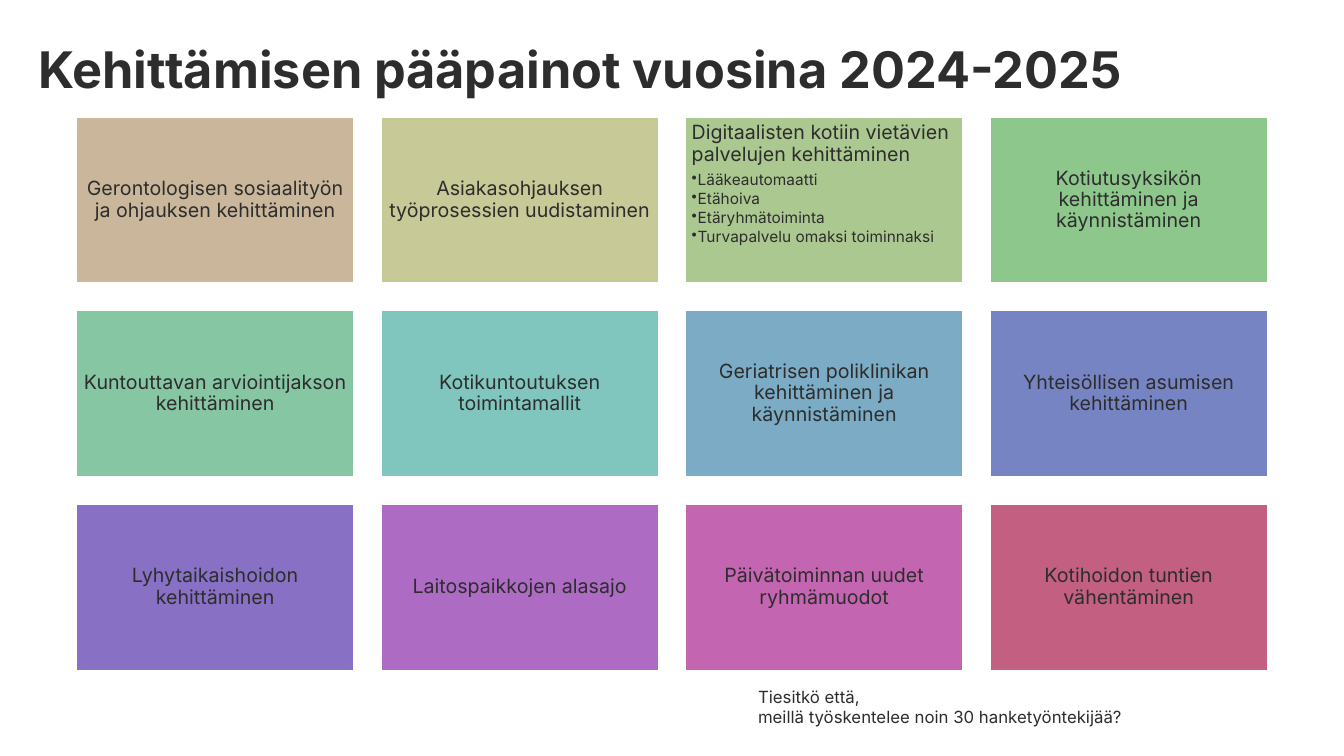
from lxml import etree
from pptx import Presentation
from pptx.dml.color import RGBColor
from pptx.enum.shapes import MSO_SHAPE
from pptx.enum.text import MSO_ANCHOR, MSO_AUTO_SIZE, PP_ALIGN
from pptx.oxml.ns import qn
from pptx.util import Inches, Pt

RECT = MSO_SHAPE.RECTANGLE
TOP, MIDDLE, BOTTOM = MSO_ANCHOR.TOP, MSO_ANCHOR.MIDDLE, MSO_ANCHOR.BOTTOM
LEFT, CENTER = PP_ALIGN.LEFT, PP_ALIGN.CENTER
FIT_SHAPE = MSO_AUTO_SIZE.SHAPE_TO_FIT_TEXT

FONT, INK, WHITE = "Inter", "2D2D2D", "FFFFFF"
TITLE = "Kehittämisen pääpainot vuosina 2024-2025"
FOOTNOTE = ["Tiesitkö että,", "meillä työskentelee noin 30 hanketyöntekijää?"]

# Heading, fill, bullets
CARDS = [
    ("Gerontologisen sosiaalityön ja ohjauksen kehittäminen", "CAB69B", []),
    ("Asiakasohjauksen työprosessien uudistaminen", "C7C996", []),
    ("Digitaalisten kotiin vietävien palvelujen kehittäminen", "ACC891",
     ["Lääkeautomaatti", "Etähoiva", "Etäryhmätoiminta",
      "Turvapalvelu omaksi toiminnaksi"]),
    ("Kotiutusyksikön kehittäminen ja käynnistäminen", "8EC78C", []),
    ("Kuntouttavan arviointijakson kehittäminen", "86C6A2", []),
    ("Kotikuntoutuksen toimintamallit", "81C6BE", []),
    ("Geriatrisen poliklinikan kehittäminen ja käynnistäminen", "7BABC5", []),
    ("Yhteisöllisen asumisen kehittäminen", "7684C4", []),
    ("Lyhytaikaishoidon kehittäminen", "8870C4", []),
    ("Laitospaikkojen alasajo", "AD6BC4", []),
    ("Päivätoiminnan uudet ryhmämuodot", "C365B0", []),
    ("Kotihoidon tuntien vähentäminen", "C35F80", []),
]
COLS = 4
GRID_X, GRID_Y = 0.76, 1.16
CARD_W, CARD_H, GAP = 2.75, 1.65, 0.27
INSET = 0.06


def rgb(value):
    return RGBColor.from_string(value)


def add_text(tf, text, size, first=False, bold=False, align=LEFT,
             spacing=None, after=None, bullet=False):
    p = tf.paragraphs[0] if first else tf.add_paragraph()
    if bullet:
        p.level = 1
        pPr = p._p.get_or_add_pPr()
        pPr.set("marL", str(Inches(INSET)))
        pPr.set("indent", str(-Inches(INSET)))
        etree.SubElement(pPr, qn("a:buChar")).set("char", "•")
    p.alignment = align
    if spacing is not None:
        p.line_spacing = spacing
    if after is not None:
        p.space_after = Pt(after)
    r = p.add_run()
    r.text = text
    r.font.name = FONT
    r.font.size = Pt(size)
    r.font.bold = bold
    r.font.color.rgb = rgb(INK)


def add_card(slide, x, y, heading, fill, bullets):
    sp = slide.shapes.add_shape(RECT, Inches(x), Inches(y),
                                Inches(CARD_W), Inches(CARD_H))
    sp.shadow.inherit = False
    sp.fill.solid()
    sp.fill.fore_color.rgb = rgb(fill)
    sp.line.color.rgb = rgb(WHITE)
    sp.line.width = Pt(1)
    tf = sp.text_frame
    tf.word_wrap = True
    tf.margin_left = tf.margin_right = Inches(INSET)
    tf.margin_top = tf.margin_bottom = Inches(INSET)
    tf.vertical_anchor = TOP if bullets else MIDDLE
    add_text(tf, heading, 14, first=True, align=LEFT if bullets else CENTER,
             spacing=0.9, after=4.9)
    for bullet in bullets:
        add_text(tf, bullet, 11, spacing=0.9, after=1.65, bullet=True)


prs = Presentation()
prs.slide_width, prs.slide_height = Inches(13.33), Inches(7.5)
slide = prs.slides.add_slide(prs.slide_layouts[6])

title = slide.shapes.add_textbox(Inches(0.28), Inches(0.23),
                                 Inches(12.41), Inches(0.8))
tf = title.text_frame
tf.word_wrap = True
tf.vertical_anchor = BOTTOM
add_text(tf, TITLE, 36, first=True, bold=True, spacing=Pt(45), after=6)

footnote = slide.shapes.add_textbox(Inches(7.42), Inches(6.76),
                                    Inches(3.87), Inches(0.5))
tf = footnote.text_frame
tf.word_wrap = False
tf.auto_size = FIT_SHAPE
for i, line in enumerate(FOOTNOTE):
    add_text(tf, line, 12, first=i == 0)

for i, (heading, fill, bullets) in enumerate(CARDS):
    row, col = divmod(i, COLS)
    add_card(slide, GRID_X + col * (CARD_W + GAP),
             GRID_Y + row * (CARD_H + GAP), heading, fill, bullets)

prs.save("out.pptx")
